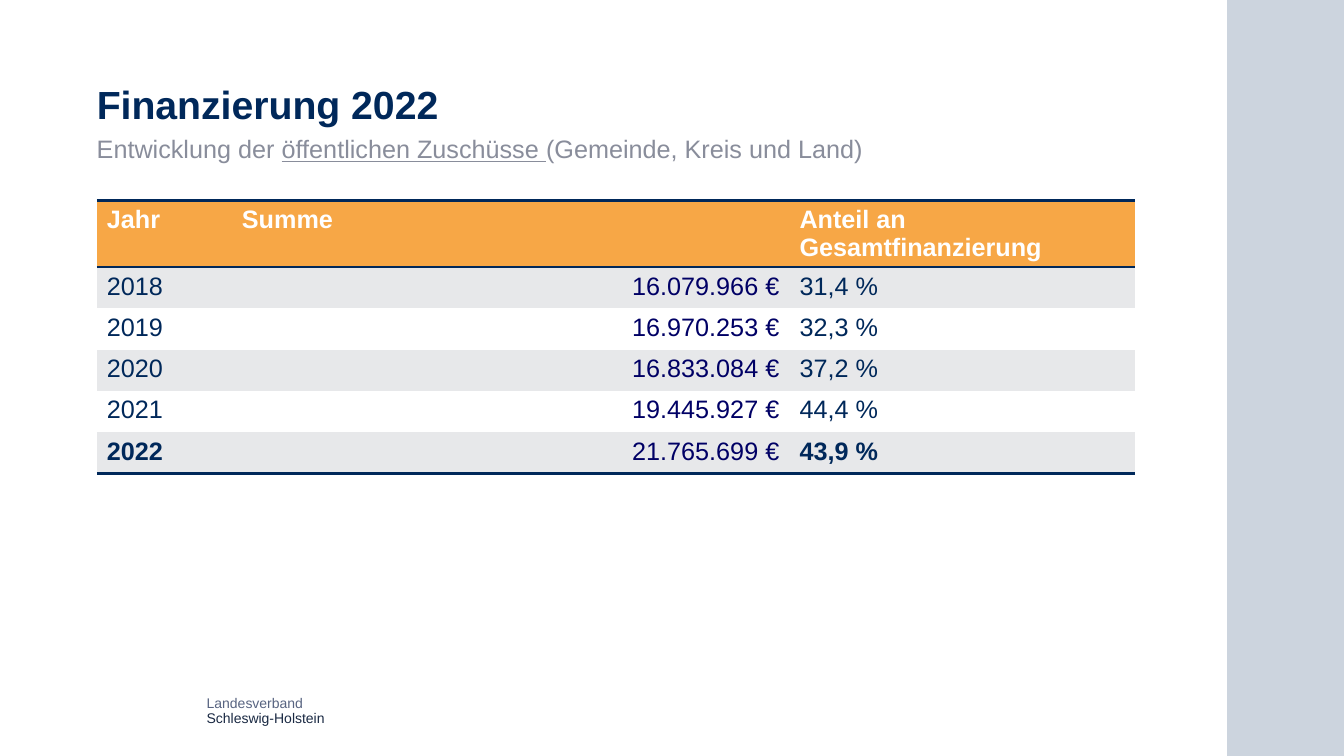
from dataclasses import dataclass, field
from typing import Any

from lxml.etree import SubElement
from pptx import Presentation
from pptx.dml.color import RGBColor
from pptx.enum.shapes import MSO_SHAPE as Preset
from pptx.enum.text import MSO_ANCHOR as Anchor, MSO_AUTO_SIZE as AutoSize, PP_ALIGN as Align
from pptx.oxml import parse_xml
from pptx.oxml.ns import nsdecls, qn
from pptx.util import Inches, Pt

COLORS = {
    "navy": "00285A",
    "amount": "000065",
    "subtitle": "898D9B",
    "footer_light": "586481",
    "footer_dark": "1A2943",
    "orange": "F7A746",
    "band": "E7E8EA",
    "white": "FFFFFF",
}
NO_STYLE = "{2D5ABB26-0587-4C30-8999-92F81FD0307C}"
LEFT, CONTENT_WIDTH = 0.96, 10.3
COLUMN_WIDTHS = (1.34, 5.53, 3.43)
ROW_HEIGHT = 0.41
ROWS = (
    ("Jahr", "Summe", "Anteil an Gesamtfinanzierung"),
    ("2018", "16.079.966 €", "31,4 %"),
    ("2019", "16.970.253 €", "32,3 %"),
    ("2020", "16.833.084 €", "37,2 %"),
    ("2021", "19.445.927 €", "44,4 %"),
    ("2022", "21.765.699 €", "43,9 %"),
)


@dataclass(frozen=True)
class TextRun:
    text: str
    color: str
    size: float = 18
    formats: dict[str, Any] = field(default_factory=dict)


@dataclass(frozen=True)
class TextBlock:
    box: tuple[float, float, float, float]
    paragraphs: tuple[tuple[TextRun, ...], ...]
    line_spacing: Any
    anchor: Any = Anchor.TOP


TITLE = TextBlock(
    (LEFT, 0.43, CONTENT_WIDTH, 0.84),
    ((TextRun("Finanzierung 2022", "navy", 28, {"bold": True}),),),
    0.9,
    Anchor.BOTTOM,
)
SUBTITLE = TextBlock(
    (LEFT, 1.36, CONTENT_WIDTH, 0.3),
    ((
        TextRun("Entwicklung der ", "subtitle"),
        TextRun("öffentlichen Zuschüsse ", "subtitle", formats={"underline": True}),
        TextRun("(Gemeinde, Kreis und Land)", "subtitle"),
    ),),
    0.9,
)
FOOTER = TextBlock(
    (2.05, 6.87, 2.49, 0.34),
    (
        (TextRun("Landesverband", "footer_light", 10),),
        (TextRun("Schleswig-Holstein", "footer_dark", 10),),
    ),
    Pt(11),
    Anchor.BOTTOM,
)


def rgb(name: str) -> RGBColor:
    return RGBColor.from_string(COLORS[name])


def set_all(target: Any, formats: dict[str, Any]) -> None:
    for name, value in formats.items():
        setattr(target, name, value)


def add_run(paragraph: Any, text_run: TextRun) -> None:
    run = paragraph.add_run()
    run.text = text_run.text
    set_all(run.font, {"name": "Arial", "size": Pt(text_run.size), "bold": False} | text_run.formats)
    run.font.color.rgb = rgb(text_run.color)


def fill_text(shape: Any, block: TextBlock) -> None:
    places = map(Inches, block.box)
    set_all(shape, dict(zip(("left", "top", "width", "height"), places)))
    frame = shape.text_frame
    set_all(frame, {
        "word_wrap": True,
        "auto_size": AutoSize.NONE,
        "vertical_anchor": block.anchor,
        "margin_left": 0,
        "margin_top": 0,
        "margin_right": 0,
        "margin_bottom": 0,
    })
    for index, runs in enumerate(block.paragraphs):
        paragraph = frame.add_paragraph() if index else frame.paragraphs[0]
        set_all(paragraph, {
            "alignment": Align.LEFT,
            "line_spacing": block.line_spacing,
            "space_before": Pt(0),
        })
        for text_run in runs:
            add_run(paragraph, text_run)


def add_sidebar(slide: Any) -> None:
    sidebar = slide.shapes.add_shape(
        Preset.RECTANGLE, Inches(12.17), 0, Inches(1.17), Inches(7.5)
    )
    sidebar.shadow.inherit = False
    sidebar.line.fill.background()
    sidebar.fill.solid()
    sidebar.fill.fore_color.rgb = rgb("navy")
    color = next(sidebar.fill._xPr.iter(qn("a:srgbClr")))
    SubElement(color, qn("a:alpha"), val="20000")


def add_borders(cell: Any, sides: tuple[str, ...]) -> None:
    properties = cell._tc.get_or_add_tcPr()
    for index, side in enumerate(sides):
        properties.insert(index, parse_xml(
            f'<a:ln{side} {nsdecls("a")} w="{Pt(2)}"><a:solidFill>'
            f'<a:srgbClr val="{COLORS["navy"]}"/></a:solidFill></a:ln{side}>'
        ))


def add_funding_table(slide: Any) -> None:
    table = slide.shapes.add_table(
        len(ROWS), len(COLUMN_WIDTHS), Inches(LEFT), Inches(1.99),
        Inches(CONTENT_WIDTH), Inches(ROW_HEIGHT * len(ROWS)),
    ).table
    table.horz_banding = False
    table._tbl.tblPr.find(qn("a:tableStyleId")).text = NO_STYLE
    for column, width in zip(table.columns, COLUMN_WIDTHS):
        column.width = Inches(width)
    last = len(ROWS) - 1
    for row, values in enumerate(ROWS):
        table.rows[row].height = Inches(ROW_HEIGHT)
        header = row == 0
        fill = "orange" if header else "band" if row % 2 else "white"
        for column, value in enumerate(values):
            cell = table.cell(row, column)
            amount = column == 1 and not header
            color = "white" if header else "amount" if amount else "navy"
            bold = header or (row == last and not amount)
            cell.fill.solid()
            cell.fill.fore_color.rgb = rgb(fill)
            add_borders(cell, ("T", "B") if header else ("B",) if row == last else ())
            paragraph = cell.text_frame.paragraphs[0]
            paragraph.alignment = Align.RIGHT if amount else Align.LEFT
            add_run(paragraph, TextRun(value, color, formats={"bold": bold}))


def main() -> None:
    presentation = Presentation()
    set_all(presentation, {"slide_width": Inches(13.33), "slide_height": Inches(7.5)})
    slide = presentation.slides.add_slide(presentation.slide_layouts[5])
    fill_text(slide.shapes.title, TITLE)
    add_sidebar(slide)
    for block in (FOOTER, SUBTITLE):
        fill_text(slide.shapes.add_textbox(0, 0, 0, 0), block)
    add_funding_table(slide)
    presentation.save("out.pptx")


if __name__ == "__main__":
    main()
